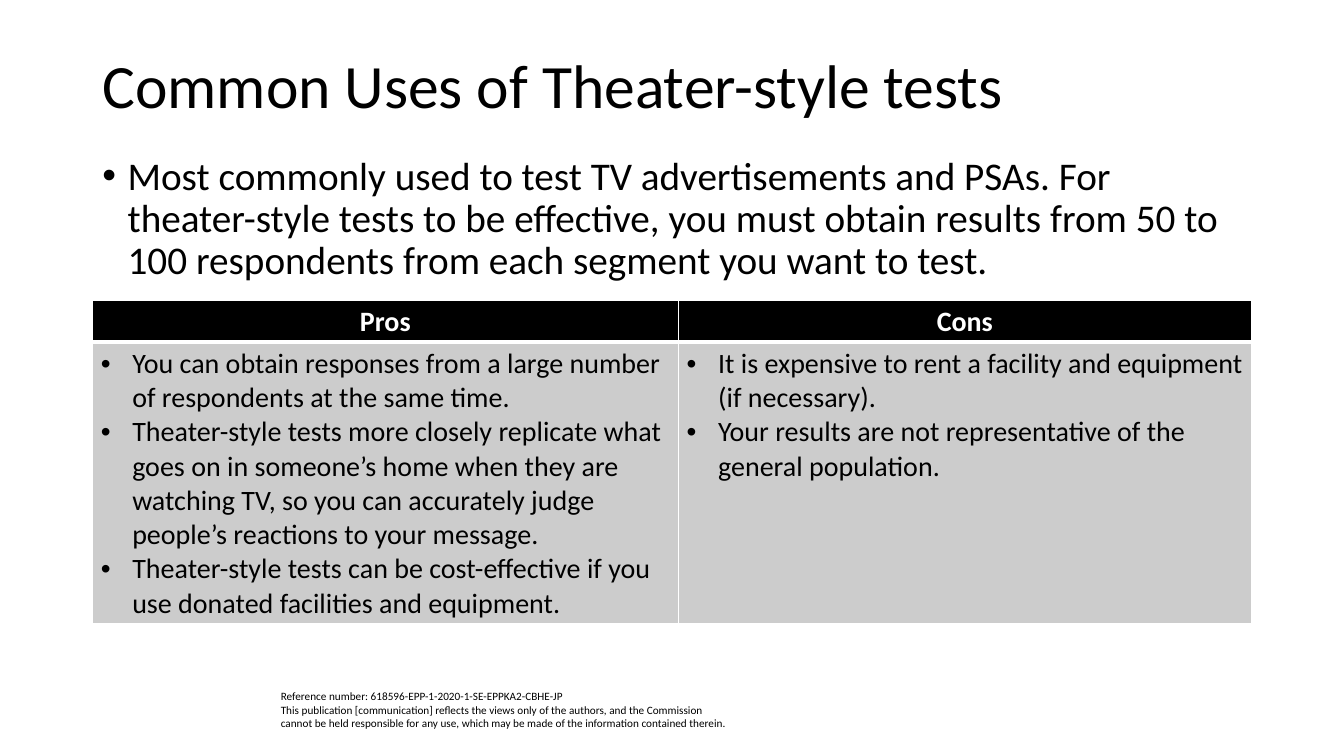
"""Builds the slide on common uses of theater-style tests."""
from dataclasses import dataclass

from lxml.etree import SubElement
from pptx import Presentation
from pptx.dml.color import RGBColor
from pptx.enum.text import MSO_ANCHOR as Anchor, MSO_AUTO_SIZE as AutoSize, PP_ALIGN as Align
from pptx.oxml.ns import qn
from pptx.util import Pt

PX = 9525


@dataclass(frozen=True)
class Theme:
    font: str = "Calibri"
    bullet_font: str = "Arial"
    ink: str = "000000"
    paper: str = "FFFFFF"
    panel: str = "CCCCCC"
    title: int = 44
    body: int = 28
    cell: int = 20
    footer: int = 8


def apply(target, values):
    for attribute, value in values.items():
        setattr(target, attribute, value)


class SlideBuilder:
    def __init__(self, deck, theme):
        self.theme = theme
        self.slide = deck.slides.add_slide(deck.slide_layouts[1])

    def place(self, shape, box):
        apply(shape, dict(zip(("left", "top", "width", "height"), (n * PX for n in box))))

    def bullet(self, paragraph, indent):
        props = paragraph._p.get_or_add_pPr()
        for key, value in {"marL": indent * PX, "indent": -indent * PX}.items():
            props.set(key, str(value))
        SubElement(props, qn("a:buFont"), typeface=self.theme.bullet_font)
        SubElement(props, qn("a:buChar"), char="•")

    def fill_text(self, frame, lines, size, color=None, bold=False, indent=0, **layout):
        for index, line in enumerate(lines):
            paragraph = frame.paragraphs[0] if index == 0 else frame.add_paragraph()
            paragraph.text = line
            if indent:
                self.bullet(paragraph, indent)
            apply(paragraph, {"space_before": Pt(0), **layout})
            for run in paragraph.runs:
                apply(run.font, {"name": self.theme.font, "size": Pt(size), "bold": bold})
                run.font.color.rgb = RGBColor.from_string(color or self.theme.ink)

    def title(self, text, box):
        heading = self.slide.shapes.title
        self.place(heading, box)
        apply(heading.text_frame, {"vertical_anchor": Anchor.MIDDLE, "auto_size": AutoSize.NONE})
        self.fill_text(heading.text_frame, [text], self.theme.title,
                       alignment=Align.LEFT, line_spacing=0.9)

    def body(self, points, box):
        summary = self.slide.placeholders[1]
        self.place(summary, box)
        apply(summary.text_frame, {"vertical_anchor": Anchor.TOP, "auto_size": AutoSize.NONE})
        self.fill_text(summary.text_frame, points, self.theme.body, indent=24,
                       alignment=Align.LEFT, line_spacing=0.9)

    def footer(self, text, box):
        notice = self.slide.shapes.add_textbox(*(n * PX for n in box))
        notice.text_frame.word_wrap = True
        self.fill_text(notice.text_frame, [text], self.theme.footer)

    def borders(self, cell, widths):
        props = cell._tc.get_or_add_tcPr()
        for side, width in zip("LRTB", widths):
            line = SubElement(props, qn(f"a:ln{side}"), w=str(Pt(width)))
            fill = SubElement(line, qn("a:solidFill"))
            SubElement(fill, qn("a:srgbClr"), val=self.theme.paper)

    def cell(self, cell, lines, fill, widths, **text):
        self.borders(cell, widths)
        cell.fill.solid()
        cell.fill.fore_color.rgb = RGBColor.from_string(fill)
        apply(cell, {"margin_left": 8 * PX, "margin_right": 8 * PX,
                     "margin_top": 4 * PX, "margin_bottom": 4 * PX})
        self.fill_text(cell.text_frame, lines, self.theme.cell, **text)

    def comparison(self, sides, corner, widths, heights):
        box = (*corner, sum(widths), sum(heights))
        table = self.slide.shapes.add_table(
            2, len(sides), *(n * PX for n in box)).table
        apply(table, {"first_row": False, "horz_banding": False})
        for row, height in zip(table.rows, heights):
            row.height = height * PX
        for index, (heading, points) in enumerate(sides.items()):
            table.columns[index].width = widths[index] * PX
            self.cell(table.cell(0, index), [heading], self.theme.ink, (1, 1, 1, 3),
                      color=self.theme.paper, bold=True, alignment=Align.CENTER)
            self.cell(table.cell(1, index), points, self.theme.panel, (1, 1, 3, 1),
                      indent=30, alignment=Align.LEFT)


def main():
    deck = Presentation()
    apply(deck, {"slide_width": 1280 * PX, "slide_height": 720 * PX})
    builder = SlideBuilder(deck, Theme())
    builder.footer(
        "Reference number: 618596-EPP-1-2020-1-SE-EPPKA2-CBHE-JP\v"
        "This publication [communication] reflects the views only of the authors, "
        "and the Commission cannot be held responsible for any use, which may be made "
        "of the information contained therein.", (258, 652, 445, 48))
    builder.title("Common Uses of Theater-style tests", (88, 38, 1104, 92))
    builder.body([
        "Most commonly used to test TV advertisements and PSAs. For theater-style tests "
        "to be effective, you must obtain results from 50 to 100 respondents from each "
        "segment you want to test."], (88, 144, 1104, 505))
    builder.comparison({
        "Pros": [
            "You can obtain responses from a large number of respondents at the same time.",
            "Theater-style tests more closely replicate what goes on in someone’s home when "
            "they are watching TV, so you can accurately judge people’s reactions to your message.",
            "Theater-style tests can be cost-effective if you use donated facilities and equipment.",
        ],
        "Cons": [
            "It is expensive to rent a facility and equipment (if necessary).",
            "Your results are not representative of the general population.",
        ],
    }, (88, 286), (558, 546), (40, 268))
    deck.save("out.pptx")


if __name__ == "__main__":
    main()
